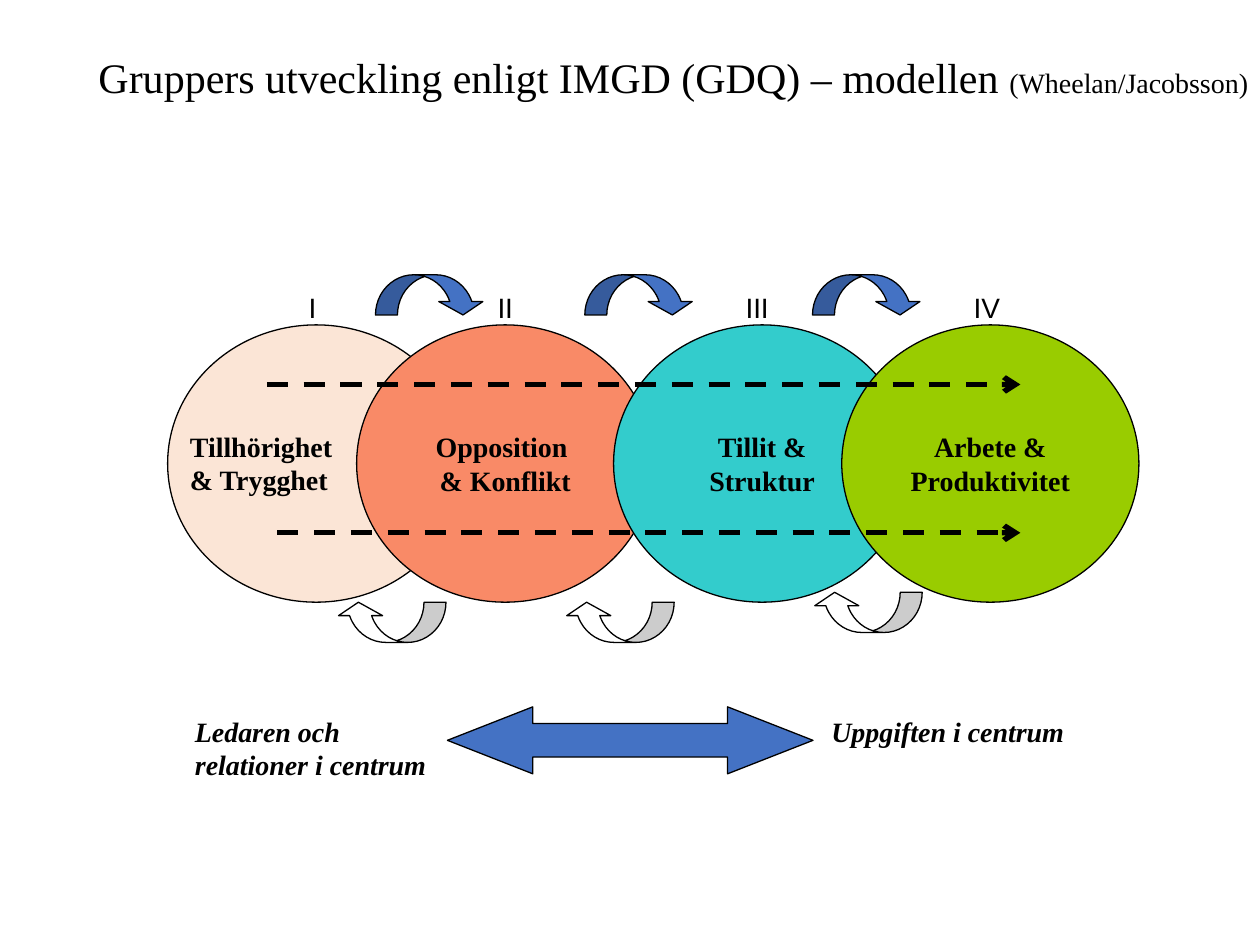
"""Build the slide on group development in four overlapping stages."""
from lxml.etree import SubElement
from pptx import Presentation
from pptx.dml.color import RGBColor
from pptx.enum.dml import MSO_LINE
from pptx.enum.shapes import MSO_CONNECTOR, MSO_SHAPE
from pptx.enum.text import MSO_ANCHOR as ANCHOR, MSO_AUTO_SIZE as AUTO_SIZE, PP_ALIGN as ALIGN
from pptx.oxml.ns import qn
from pptx.util import Cm, Pt

BLACK = RGBColor(0x00, 0x00, 0x00)
WHITE = RGBColor(0xFF, 0xFF, 0xFF)
BLUE = RGBColor(0x44, 0x72, 0xC4)
PEACH = RGBColor(0xFB, 0xE5, 0xD6)
CORAL = RGBColor(0xF9, 0x8A, 0x67)
TURQUOISE = RGBColor(0x33, 0xCC, 0xCC)
GREEN = RGBColor(0x99, 0xCC, 0x00)
SERIF = "Times New Roman"

prs = Presentation()
prs.slide_width, prs.slide_height = Cm(25.4), Cm(19.05)
slide = prs.slides.add_slide(prs.slide_layouts[5])
shapes = slide.shapes


def add_figure(kind, left, top, width, height, color, adjustments=()):
    figure = shapes.add_shape(kind, Cm(left), Cm(top), Cm(width), Cm(height))
    figure.shadow.inherit = False
    figure.fill.solid()
    figure.fill.fore_color.rgb = color
    figure.line.color.rgb = BLACK
    figure.line.width = Pt(0.75)
    for index, value in enumerate(adjustments):
        figure.adjustments[index] = value
    return figure


def write(frame, lines, font_name=SERIF, bold=False, italic=False, align=ALIGN.LEFT, wrap=False):
    frame.word_wrap = wrap
    frame.text = "\n".join(lines)
    for paragraph in frame.paragraphs:
        paragraph.alignment = align
        font = paragraph.font
        font.name, font.size, font.bold, font.italic = font_name, Pt(16), bold, italic
        font.color.rgb = BLACK


title = shapes.title
title.left, title.top, title.width, title.height = Cm(1.73), Cm(0.91), Cm(23.93), Cm(1.27)
heading = title.text_frame
heading.word_wrap = False
heading.auto_size = AUTO_SIZE.NONE
heading.vertical_anchor = ANCHOR.TOP
heading_line = heading.paragraphs[0]
heading_line.alignment = ALIGN.LEFT
heading_line.font.name = SERIF
heading_line.font.color.rgb = BLACK
for words, size in (("Gruppers utveckling enligt IMGD (GDQ) – modellen ", 24),
                    ("(Wheelan/Jacobsson)", 16)):
    run = heading_line.add_run()
    run.text = words
    run.font.size = Pt(size)

focus = shapes.add_textbox(Cm(3.68), Cm(14.27), Cm(20.04), Cm(1.63)).text_frame
write(focus, ["Ledaren och\tUppgiften i centrum", "relationer i centrum"],
      bold=True, italic=True, wrap=True)
focus_props = focus.paragraphs[0]._p.get_or_add_pPr()
tab_stops = SubElement(focus_props, qn("a:tabLst"))
SubElement(tab_stops, qn("a:tab"), pos=str(Cm(12.83)), algn="l")
focus_props.insert(0, tab_stops)

add_figure(MSO_SHAPE.LEFT_RIGHT_ARROW, 9.02, 14.25, 7.37, 1.35, BLUE, (0.5, 1.275))

stages = [
    (3.38, PEACH, []),
    (7.19, CORAL, ["Opposition ", "& Konflikt"]),
    (12.37, TURQUOISE, ["Tillit &", "Struktur"]),
    (16.97, GREEN, ["Arbete &", "Produktivitet"]),
]
for left, color, stage_name in stages:
    circle = add_figure(MSO_SHAPE.OVAL, left, 6.55, 5.99, 5.59, color)
    if stage_name:
        circle.text_frame.vertical_anchor = ANCHOR.MIDDLE
        write(circle.text_frame, stage_name, bold=True, align=ALIGN.CENTER)

steps = [(7.57, 5.54, BLUE, 0), (11.79, 5.54, BLUE, 0), (16.38, 5.54, BLUE, 0),
         (6.78, 12.14, WHITE, 180), (11.38, 12.14, WHITE, 180), (16.38, 11.94, WHITE, 180)]
for left, top, color, rotation in steps:
    step = add_figure(MSO_SHAPE.CURVED_DOWN_ARROW, left, top, 2.21, 0.81, color,
                      (0.548, 1.097, 0.333))
    step.rotation = rotation

first_stage = shapes.add_textbox(Cm(3.58), Cm(8.53), Cm(3.4), Cm(1.63))
write(first_stage.text_frame, ["Tillhörighet", "& Trygghet"], bold=True)

for start, height in ((5.59, 10.74), (5.38, 7.75)):
    progress = shapes.add_connector(MSO_CONNECTOR.STRAIGHT, Cm(start), Cm(height),
                                    Cm(20.57), Cm(height))
    progress.line.color.rgb = BLACK
    progress.line.width = Pt(3)
    progress.line.dash_style = MSO_LINE.DASH
    SubElement(progress.line._get_or_add_ln(), qn("a:tailEnd"), type="arrow")
    SubElement(progress._element.spPr, qn("a:effectLst"))

for numeral, left, width in (("I", 5.97, 0.71), ("II", 9.78, 0.89),
                             ("III", 14.78, 1.09), ("IV", 19.38, 1.12)):
    stage_number = shapes.add_textbox(Cm(left), Cm(5.74), Cm(width), Cm(0.94))
    write(stage_number.text_frame, [numeral], font_name="Arial")

prs.save("out.pptx")
